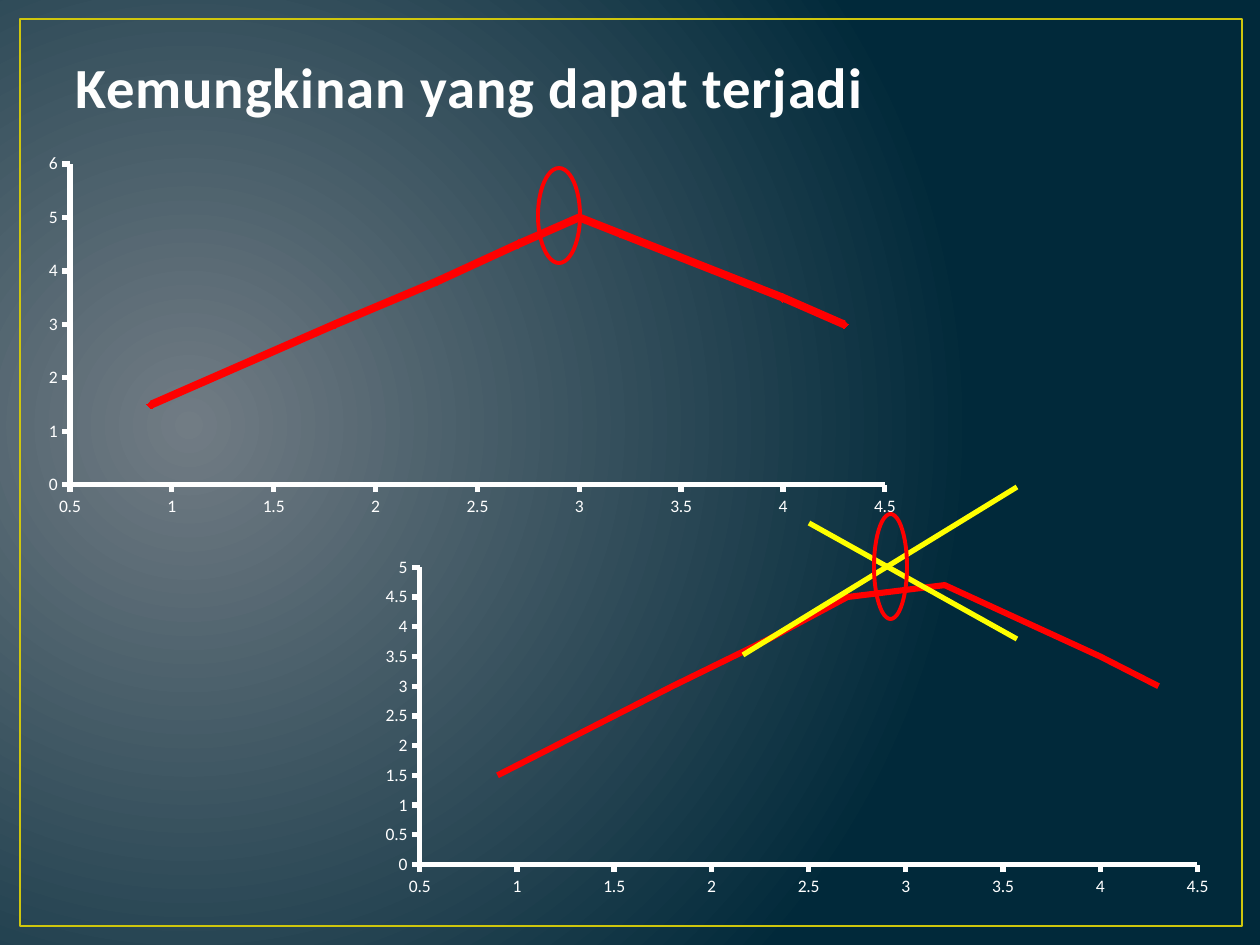
from lxml.etree import SubElement
from pptx import Presentation
from pptx.chart.data import XyChartData
from pptx.dml.color import RGBColor
from pptx.enum.chart import XL_CHART_TYPE, XL_MARKER_STYLE, XL_TICK_MARK
from pptx.enum.shapes import MSO_CONNECTOR, MSO_SHAPE
from pptx.enum.text import MSO_ANCHOR
from pptx.oxml import parse_xml
from pptx.oxml.ns import nsdecls, qn
from pptx.util import Emu, Pt

FONT = "Calibri"
WHITE, RED, YELLOW, GOLD = "FFFFFF", "FF0000", "FFFF00", "CFC60D"
TITLE_COLOR, TITLE_OUTLINE = "FEFEFE", "384F55"

RISING = [(0.9, 1.5), (1.8, 3), (2.3, 3.8), (2.7, 4.5)]
FALLING = [(3.2, 4.7), (4, 3.5), (4.3, 3)]
SHARP_PEAK = RISING + [(3, 5)] + FALLING
FLAT_PEAK = RISING + FALLING


def px(*lengths):
    return [Emu(round(length * 914400 / 126)) for length in lengths]


def rgb(color):
    return RGBColor.from_string(color)


def set_attributes(target, values):
    for name, value in values.items():
        setattr(target, name, value)


def set_line(line, color, width):
    line.color.rgb = rgb(color)
    line.width = Pt(width)


def set_background(slide):
    """Radial gradient centred at the lower left of the middle."""
    background = parse_xml(
        f'<p:bg {nsdecls("p", "a")}><p:bgPr><a:gradFill rotWithShape="1"><a:gsLst>'
        '<a:gs pos="0"><a:srgbClr val="717C84"/></a:gs>'
        '<a:gs pos="100000"><a:srgbClr val="01293A"/></a:gs></a:gsLst>'
        '<a:path path="circle">'
        '<a:fillToRect l="15000" t="50000" r="85000" b="60000"/></a:path>'
        '</a:gradFill><a:effectLst/></p:bgPr></p:bg>')
    slide.element.find(qn("p:cSld")).insert(0, background)


def add_outline(slide, kind, box, color, width):
    shape = slide.shapes.add_shape(kind, *px(*box))
    shape.shadow.inherit = False
    shape.fill.background()
    set_line(shape.line, color, width)


def add_tangent(slide, ends):
    connector = slide.shapes.add_connector(MSO_CONNECTOR.STRAIGHT, *px(*ends))
    set_line(connector.line, YELLOW, 3)
    SubElement(connector.element.spPr, qn("a:effectLst"))


def add_title(slide, text, box):
    frame = slide.shapes.add_textbox(*px(*box)).text_frame
    set_attributes(frame, {"word_wrap": True, "vertical_anchor": MSO_ANCHOR.BOTTOM})
    run = frame.paragraphs[0].add_run()
    run.text = text
    set_attributes(run.font, {"name": FONT, "size": Pt(32.4), "bold": True})
    run.font.color.rgb = rgb(TITLE_COLOR)
    properties = run.font._element
    properties.set("spc", "50")
    properties.insert(0, parse_xml(
        f'<a:ln {nsdecls("a")} w="13335"><a:solidFill>'
        f'<a:srgbClr val="{TITLE_OUTLINE}"/></a:solidFill></a:ln>'))


def format_axis(axis, low, high, step):
    set_attributes(axis, {
        "minimum_scale": low, "maximum_scale": high, "major_unit": step,
        "has_major_gridlines": False, "has_minor_gridlines": False,
        "has_title": False, "major_tick_mark": XL_TICK_MARK.OUTSIDE,
        "minor_tick_mark": XL_TICK_MARK.NONE})
    set_attributes(axis.tick_labels, {
        "number_format": "General", "number_format_is_linked": False})
    set_line(axis.format.line, WHITE, 3)


def place_plot(chart, fractions):
    """Fix the inner plot area as fractions of the chart: x, y, w, h."""
    plot_area = chart._chartSpace.chart.plotArea
    for layout in plot_area.findall(qn("c:layout")):
        plot_area.remove(layout)
    sizes = "".join(f'<c:{name} val="{value}"/>'
                    for name, value in zip("xywh", fractions))
    plot_area.insert(0, parse_xml(
        f'<c:layout {nsdecls("c")}><c:manualLayout><c:layoutTarget val="inner"/>'
        f'<c:xMode val="edge"/><c:yMode val="edge"/>{sizes}'
        '</c:manualLayout></c:layout>'))


def add_curve_chart(slide, kind, box, points, y_scale, width, plot):
    data = XyChartData()
    curve = data.add_series("Series 1")
    for x, y in points:
        curve.add_data_point(x, y)
    chart = slide.shapes.add_chart(kind, *px(*box), data).chart
    set_attributes(chart, {"has_title": False, "has_legend": False})
    set_attributes(chart.font, {"name": FONT, "size": Pt(10)})
    chart.font.color.rgb = rgb(WHITE)
    format_axis(chart.category_axis, 0.5, 4.5, 0.5)
    format_axis(chart.value_axis, *y_scale)
    place_plot(chart, plot)
    chart.plots[0].vary_by_categories = False
    series = chart.plots[0].series[0]
    series.smooth = False
    set_line(series.format.line, RED, width)
    if kind == XL_CHART_TYPE.XY_SCATTER_LINES:
        set_attributes(series.marker, {"style": XL_MARKER_STYLE.DIAMOND, "size": 5})
        series.marker.format.fill.solid()
        series.marker.format.fill.fore_color.rgb = rgb(RED)
        series.marker.format.line.color.rgb = rgb(RED)


def main():
    presentation = Presentation()
    presentation.slide_width, presentation.slide_height = px(1260, 945)
    slide = presentation.slides.add_slide(presentation.slide_layouts[6])
    set_background(slide)
    add_outline(slide, MSO_SHAPE.RECTANGLE, (20, 19, 1222, 907), GOLD, 1.5)
    add_title(slide, "Kemungkinan yang dapat terjadi", (63, 38, 1134, 88))
    add_curve_chart(slide, XL_CHART_TYPE.XY_SCATTER_LINES, (32, 147, 882, 378),
                    SHARP_PEAK, (0, 6, 1), 4.5, (0.043, 0.045, 0.924, 0.849))
    add_curve_chart(slide, XL_CHART_TYPE.XY_SCATTER_LINES_NO_MARKERS,
                    (378, 557, 851, 357), FLAT_PEAK, (0, 5, 0.5), 3.5,
                    (0.049, 0.029, 0.914, 0.833))
    add_outline(slide, MSO_SHAPE.OVAL, (538, 168, 42, 95), RED, 2.25)
    for ends in ((743, 655, 1017, 487), (1017, 639, 809, 523)):
        add_tangent(slide, ends)
    add_outline(slide, MSO_SHAPE.OVAL, (874, 514, 33, 105), RED, 2.25)
    presentation.save("out.pptx")


if __name__ == "__main__":
    main()
